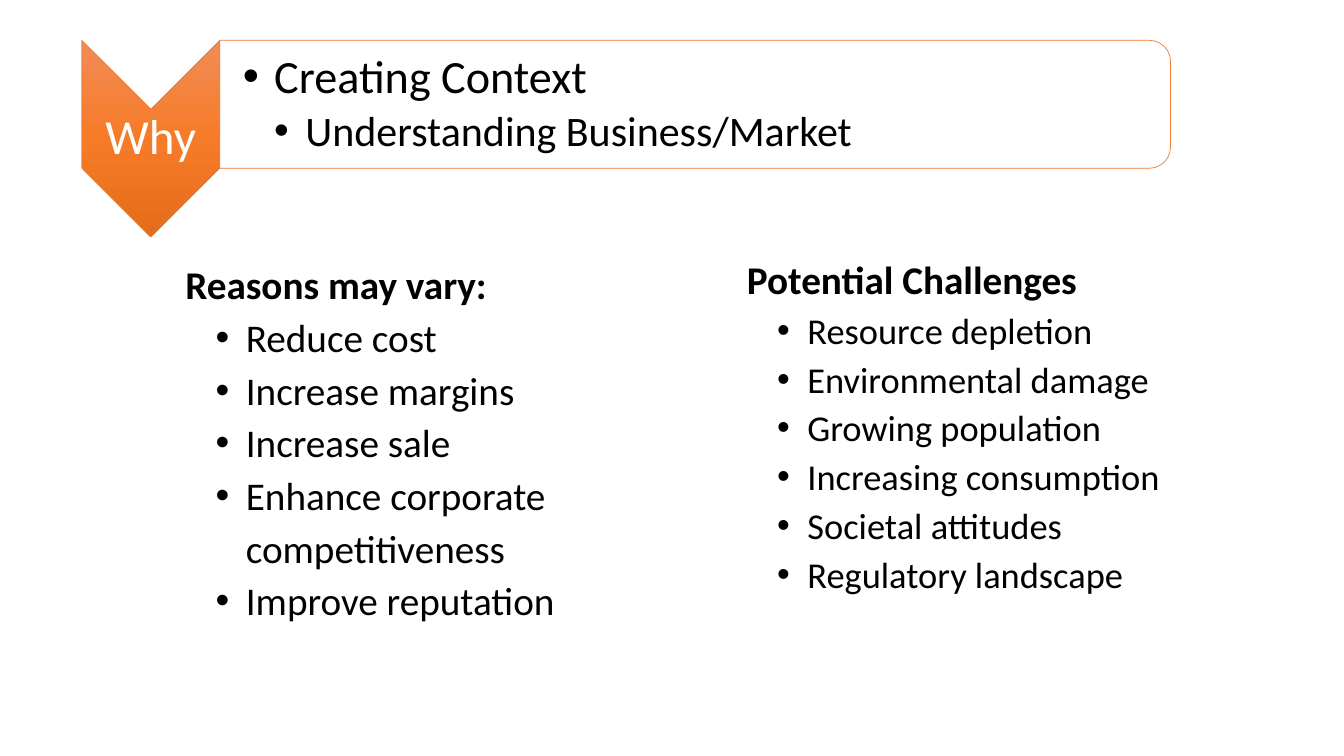
import copy
from dataclasses import dataclass

import pptx
import pptx.dml.color
import pptx.enum.shapes
import pptx.enum.text
import pptx.oxml.ns
import pptx.util
from lxml import etree

EMU_PER_PX = 9144  # 100 px to the inch


@dataclass(frozen=True)
class Theme:
    font: str = "Calibri"
    text: str = "000000"
    inverse: str = "FFFFFF"
    accent: str = "ED7D31"
    gradient: tuple[str, ...] = ("F18C57", "F67B28", "E56C19")
    label: int = 35
    topic: int = 33
    subtopic: int = 30
    body: int = 28
    compact: int = 26
    outline: float = 0.5


THEME = Theme()


@dataclass(frozen=True)
class Box:
    left: int
    top: int
    width: int
    height: int


@dataclass(frozen=True)
class Line:
    text: str
    size: int
    bold: bool = False
    color: str = THEME.text
    margin: int = 0  # text indent in px; zero means no bullet
    hanging: int = 0


@dataclass(frozen=True)
class TextBlock:
    box: Box
    lines: list[Line]
    spacing: float
    space_after: int = 0
    insets: tuple[int, int, int, int] = (10, 5, 10, 5)
    anchor: pptx.enum.text.MSO_ANCHOR = pptx.enum.text.MSO_ANCHOR.TOP
    align: pptx.enum.text.PP_ALIGN = pptx.enum.text.PP_ALIGN.LEFT


def px(length: int) -> pptx.util.Emu:
    return pptx.util.Emu(length * EMU_PER_PX)


def rgb(color: str) -> pptx.dml.color.RGBColor:
    return pptx.dml.color.RGBColor.from_string(color)


def frame(box: Box) -> tuple[pptx.util.Emu, ...]:
    return px(box.left), px(box.top), px(box.width), px(box.height)


def add_bullet(paragraph, line: Line) -> None:
    properties = paragraph._p.get_or_add_pPr()
    properties.set("marL", str(px(line.margin)))
    properties.set("indent", str(-px(line.hanging)))
    for tag, name, value in (("a:buFont", "typeface", "Arial"), ("a:buChar", "char", "•")):
        etree.SubElement(properties, pptx.oxml.ns.qn(tag)).set(name, value)


def add_text(slide, block: TextBlock) -> None:
    text_frame = slide.shapes.add_textbox(*frame(block.box)).text_frame
    text_frame.word_wrap = True
    text_frame.vertical_anchor = block.anchor
    (text_frame.margin_left, text_frame.margin_top,
     text_frame.margin_right, text_frame.margin_bottom) = map(px, block.insets)
    for index, line in enumerate(block.lines):
        paragraph = text_frame.add_paragraph() if index else text_frame.paragraphs[0]
        paragraph.text = line.text
        paragraph.alignment = block.align
        paragraph.line_spacing = block.spacing
        paragraph.space_before = pptx.util.Pt(0)
        paragraph.space_after = pptx.util.Pt(block.space_after)
        if line.margin:
            add_bullet(paragraph, line)
        paragraph.font.name = THEME.font
        paragraph.font.size = pptx.util.Pt(line.size)
        paragraph.font.bold = line.bold
        paragraph.font.color.rgb = rgb(line.color)


def add_turned_shape(slide, kind: pptx.enum.shapes.MSO_SHAPE, box: Box):
    shape = slide.shapes.add_shape(kind, *frame(box))
    shape.rotation = 90
    shape.shadow.inherit = False
    shape.line.color.rgb = rgb(THEME.accent)
    shape.line.width = pptx.util.Pt(THEME.outline)
    return shape


def fill_gradient(shape, colors: tuple[str, ...]) -> None:
    shape.fill.gradient()
    shape.fill.gradient_angle = 0  # runs downwards once the shape is turned
    first = shape.fill.gradient_stops[0]._gs
    first.addnext(copy.deepcopy(first))
    for index, (stop, color) in enumerate(zip(shape.fill.gradient_stops, colors)):
        stop.position = index / (len(colors) - 1)
        stop.color.rgb = rgb(color)


def list_block(box: Box, heading: str, items: list[str], size: int) -> TextBlock:
    lines = [Line(heading, THEME.body, bold=True)]
    lines += [Line(item, size, margin=60, hanging=30) for item in items]
    return TextBlock(box, lines, spacing=1.12)


def build_banner(slide) -> None:
    # Chevron with its label
    chevron = add_turned_shape(slide, pptx.enum.shapes.MSO_SHAPE.CHEVRON, Box(52, 69, 195, 137))
    fill_gradient(chevron, THEME.gradient)
    middle = pptx.enum.text.MSO_ANCHOR.MIDDLE
    add_text(slide, TextBlock(
        Box(81, 108, 137, 59), [Line("Why", THEME.label, color=THEME.inverse)],
        spacing=0.9, insets=(2, 2, 2, 2), anchor=middle,
        align=pptx.enum.text.PP_ALIGN.CENTER))

    # Panel with the topic
    panel = add_turned_shape(
        slide, pptx.enum.shapes.MSO_SHAPE.ROUND_2_SAME_RECTANGLE, Box(626, -368, 127, 943))
    panel.fill.solid()
    panel.fill.fore_color.rgb = rgb(THEME.inverse)
    add_text(slide, TextBlock(
        Box(218, 46, 937, 115),
        [Line("Creating Context", THEME.topic, margin=31, hanging=31),
         Line("Understanding Business/Market", THEME.subtopic, margin=62, hanging=31)],
        spacing=0.9, space_after=5, insets=(23, 2, 2, 2), anchor=middle))


def build_lists(slide) -> None:
    add_text(slide, list_block(
        Box(174, 248, 449, 407), "Reasons may vary:",
        ["Reduce cost", "Increase margins", "Increase sale",
         "Enhance corporate competitiveness", "Improve reputation"], THEME.body))
    add_text(slide, list_block(
        Box(731, 243, 449, 407), "Potential Challenges",
        ["Resource depletion", "Environmental damage", "Growing population",
         "Increasing consumption", "Societal attitudes", "Regulatory landscape"],
        THEME.compact))


def main() -> None:
    presentation = pptx.Presentation()
    presentation.slide_width, presentation.slide_height = px(1333), px(750)
    slide = presentation.slides.add_slide(presentation.slide_layouts.get_by_name("Blank"))
    build_banner(slide)
    build_lists(slide)
    presentation.save("out.pptx")


if __name__ == "__main__":
    main()
